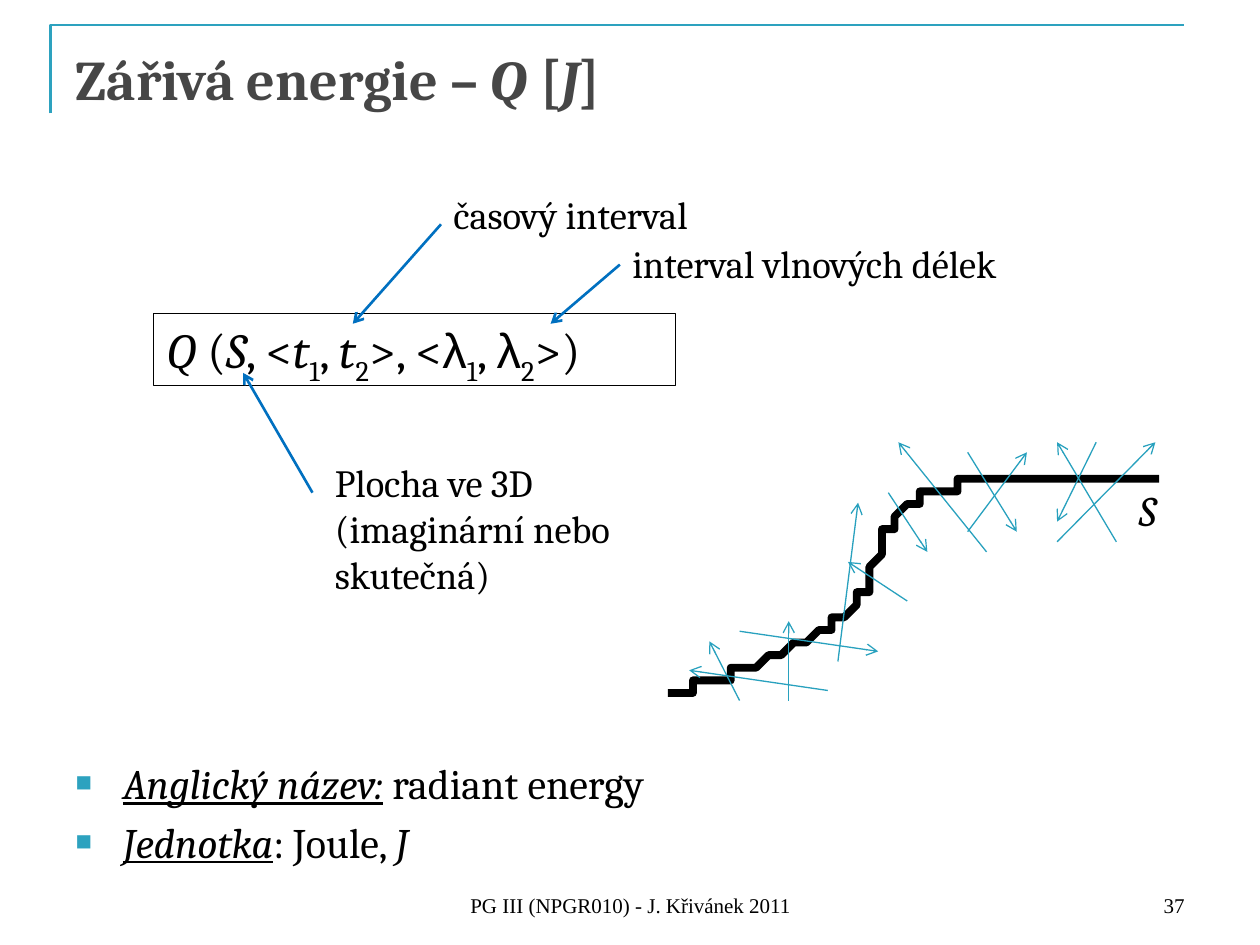
from lxml import etree
from pptx import Presentation, util as u
from pptx.dml.color import RGBColor
from pptx.enum import shapes, text
from pptx.oxml.ns import qn

deck = Presentation()
deck.slide_width, deck.slide_height = u.Inches(10), u.Inches(7.5)
unit = deck.slide_width / 100
slide = deck.slides.add_slide(deck.slide_layouts[1])
parts = slide.shapes


def paint(target, color):
    if hasattr(target, "solid"):
        target.solid()
        target = target.fore_color
    target.rgb = RGBColor.from_string(color)


def write(holder, box, paragraphs, size, color="000000", font="Cambria",
          align=text.PP_ALIGN.LEFT, anchor=text.MSO_ANCHOR.TOP):
    for side, value in zip(("left", "top", "width", "height"), box):
        setattr(holder, side, round(value * unit))
    frame = holder.text_frame
    layout = {"word_wrap": True, "auto_size": text.MSO_AUTO_SIZE.NONE,
              "vertical_anchor": anchor}
    for name, value in layout.items():
        setattr(frame, name, value)
    for index, pieces in enumerate(paragraphs):
        paragraph = frame.add_paragraph() if index else frame.paragraphs[0]
        paragraph.alignment = align
        for words, marks in pieces:
            run = paragraph.add_run()
            run.text = words
            look = {"size": u.Pt(size), "bold": "b" in marks, "italic": "i" in marks,
                    "underline": "u" in marks, "name": "Arial" if "a" in marks else font}
            for name, value in look.items():
                setattr(run.font, name, value)
            paint(run.font.fill, color)
            if "s" in marks:
                run.font._element.set("baseline", "-25000")


pen = parts.build_freeform(4.2, 9.2, scale=unit)
pen.add_line_segments([(4.2, 2.5), (94.2, 2.5)], close=False)
title_rule = pen.convert_to_shape()

curve = [(92.3, 38.4),
         (84.9, 38, 77.5, 37.5, 73.3, 39.3),
         (69.1, 41, 70.3, 46.4, 66.9, 49),
         (63.5, 51.6, 55.8, 54.7, 53.1, 54.8)]
steps = 24
points = []
start = curve[0]
for ax, ay, bx, by, ex, ey in curve[1:]:
    for step in range(1, steps + 1):
        t = step / steps
        weights = ((1 - t) ** 3, 3 * t * (1 - t) ** 2, 3 * t ** 2 * (1 - t), t ** 3)
        points.append((sum(w * x for w, x in zip(weights, (start[0], ax, bx, ex))),
                       sum(w * y for w, y in zip(weights, (start[1], ay, by, ey)))))
    start = (ex, ey)
pen = parts.build_freeform(*curve[0], scale=unit)
pen.add_line_segments(points, close=False)
surface = pen.convert_to_shape()

for outline, color, width in ((title_rule, "2DA2BF", 1.5), (surface, "000000", 4.5)):
    outline.shadow.inherit = False
    outline.fill.background()
    paint(outline.line.fill, color)
    outline.line.width = u.Pt(width)

write(parts.title, (5, 3, 90, 12.5),
      [[("Zářivá energie – ", "b"), ("Q ", "bi"), ("[", "b"), ("J", "bi"), ("]", "b")]],
      32, "464646")

facts = slide.placeholders[1]
write(facts, (5, 59.6, 90, 10),
      [[("Anglický název:", "iu"), (" radiant energy", "")],
       [("Jednotka", "iu"), (": Joule, ", ""), ("J", "i")]], 24)
for fact in facts.text_frame.paragraphs:
    fact.space_before = u.Pt(4.8)
    props = fact._p.get_or_add_pPr()
    indent = round(3.75 * unit)
    props.set("marL", str(indent))
    props.set("indent", str(-indent))
    bullet_color = etree.SubElement(props, qn("a:buClr"))
    etree.SubElement(bullet_color, qn("a:srgbClr"), val="2DA2BF")
    etree.SubElement(props, qn("a:buSzPct"), val="65000")
    etree.SubElement(props, qn("a:buFont"), typeface="Arial")
    etree.SubElement(props, qn("a:buChar"), char="■")

formula = parts.add_shape(shapes.MSO_SHAPE.RECTANGLE, 0, 0, 0, 0)
formula.shadow.inherit = False
formula.fill.background()
paint(formula.line.fill, "000000")
formula.line.width = u.Pt(0.75)
write(formula, (12.2, 24.9, 41.4, 5.7),
      [[("Q ", "i"), ("(", ""), ("S", "i"), (", <", ""), ("t", "i"), ("1", "s"),
        (", ", ""), ("t", "i"), ("2", "s"), (">, <", ""), ("λ", "a"), ("1", "s"),
        (", ", ""), ("λ", "a"), ("2", "s"), (">)", "")]], 28)

labels = [
    ((35, 14.7, 22.3, 4.7), ["časový interval"], 22, ""),
    ((49.2, 18.6, 33.4, 4.7), ["interval vlnových délek"], 22, ""),
    ((25.6, 35.9, 26.4, 12.1), ["Plocha ve 3D", "(imaginární nebo", "skutečná)"], 22, ""),
    ((89.4, 38, 3.9, 5), ["S"], 24, "i"),
]
for box, lines, size, marks in labels:
    write(parts.add_textbox(0, 0, 0, 0), box, [[(line, marks)] for line in lines], size)

footers = [
    ((34.2, 68.3, 31.7, 5), "PG III (NPGR010) - J. Křivánek 2011", text.PP_ALIGN.CENTER),
    ((71.7, 68.3, 23.3, 5), "37", text.PP_ALIGN.RIGHT),
]
for box, words, align in footers:
    write(parts.add_textbox(0, 0, 0, 0), box, [[(words, "")]], 12,
          font="Times New Roman", align=align, anchor=text.MSO_ANCHOR.BOTTOM)

pointers = [(35, 17.8, 28, 25.7), (24.8, 39.1, 19.3, 29.6), (49.2, 21, 43.7, 25.7)]
rays = [
    (87, 35.1, 83.9, 41.4), (76.8, 35.9, 80.7, 42.2), (76.8, 42.2, 81.5, 35.9),
    (70.5, 39.1, 73.6, 43.8), (72, 47.7, 67.3, 44.6), (66.5, 52.5, 68.1, 39.9),
    (58.7, 50.1, 69.7, 51.7), (58.7, 55.6, 56.3, 50.9), (78.3, 43.8, 71.3, 35.1),
    (88.6, 43, 83.9, 35.1), (83.9, 43, 91.7, 35.1), (62.6, 55.6, 62.6, 49.3),
    (65.7, 54.8, 54.7, 53.2),
]
for group, color, width in ((pointers, "0070C0", 1.5), (rays, "28A1BE", 0.75)):
    for ends in group:
        arrow = parts.add_connector(shapes.MSO_CONNECTOR.STRAIGHT,
                                    *(round(value * unit) for value in ends))
        paint(arrow.line.fill, color)
        arrow.line.width = u.Pt(width)
        etree.SubElement(arrow.line._get_or_add_ln(), qn("a:tailEnd"), type="arrow")
        etree.SubElement(arrow._element.spPr, qn("a:effectLst"))

deck.save("out.pptx")
